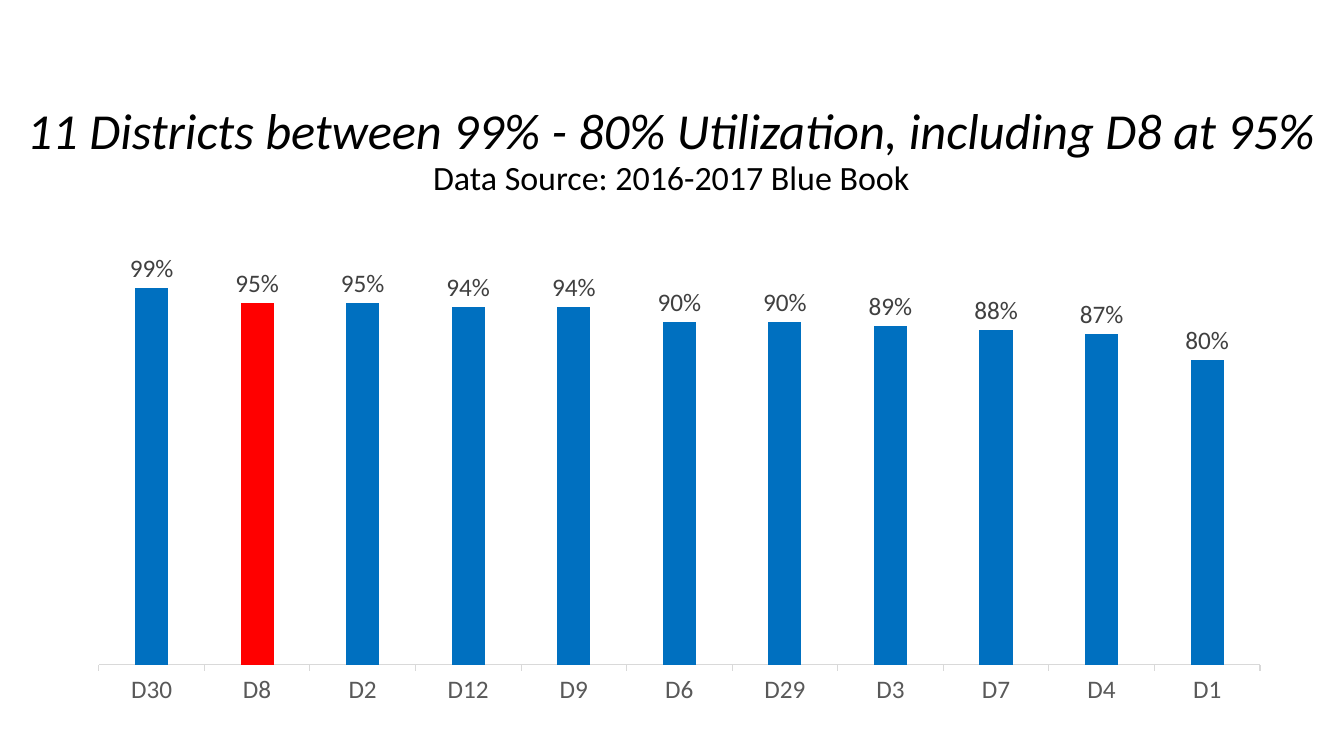
from pptx import Presentation
from pptx.chart.data import CategoryChartData
from pptx.dml.color import RGBColor
from pptx.enum.chart import XL_CHART_TYPE, XL_LABEL_POSITION, XL_TICK_MARK
from pptx.enum.text import MSO_ANCHOR, MSO_AUTO_SIZE, PP_ALIGN
from pptx.util import Pt

COLUMNS = XL_CHART_TYPE.COLUMN_CLUSTERED
OUTSIDE_END = XL_LABEL_POSITION.OUTSIDE_END
TICK_OUT, TICK_NONE = XL_TICK_MARK.OUTSIDE, XL_TICK_MARK.NONE
BOTTOM = MSO_ANCHOR.BOTTOM
NO_AUTOFIT = MSO_AUTO_SIZE.NONE
CENTER = PP_ALIGN.CENTER

FONT = "Calibri"
COLORS = {
    "heading": "000000",
    "district": "0070C0",
    "highlight": "FF0000",
    "value": "404040",
    "category": "595959",
    "axis": "D9D9D9",
}
HEADING = [
    ("11 Districts between 99% - 80% Utilization, including D8 at 95%", 36, True),
    ("Data Source: 2016-2017 Blue Book", 24.3, False),
]
UTILIZATION = {
    "D30": 0.99, "D8": 0.95, "D2": 0.95, "D12": 0.94, "D9": 0.94, "D6": 0.9,
    "D29": 0.9, "D3": 0.89, "D7": 0.88, "D4": 0.87, "D1": 0.8,
}
HIGHLIGHTED = "D8"


def color(name):
    return RGBColor.from_string(COLORS[name])


def style_font(font, size, color_name):
    font.name = FONT
    font.size = Pt(size)
    font.color.rgb = color(color_name)


def paint(part, color_name):
    part.format.fill.solid()
    part.format.fill.fore_color.rgb = color(color_name)


def add_heading(slide, left, top, width, height):
    heading = slide.shapes.title
    heading.left, heading.top = Pt(left), Pt(top)
    heading.width, heading.height = Pt(width), Pt(height)
    frame = heading.text_frame
    frame.word_wrap = True
    frame.auto_size = NO_AUTOFIT
    frame.vertical_anchor = BOTTOM
    frame.margin_left = frame.margin_right = Pt(7.2)
    frame.margin_top = frame.margin_bottom = 0
    for index, (wording, size, italic) in enumerate(HEADING):
        line = frame.add_paragraph() if index else frame.paragraphs[0]
        line.alignment = CENTER
        line.line_spacing = 0.9
        line.space_before = line.space_after = Pt(0)
        run = line.add_run()
        run.text = wording
        run.font.italic = italic
        style_font(run.font, size, "heading")


def add_utilization_chart(slide, left, top, width, height):
    data = CategoryChartData(number_format="0%")
    data.categories = list(UTILIZATION)
    data.add_series("Series 1", list(UTILIZATION.values()))
    chart = slide.shapes.add_chart(
        COLUMNS, Pt(left), Pt(top), Pt(width), Pt(height), data
    ).chart
    chart.has_title = False
    chart.has_legend = False
    style_font(chart.font, 10, "heading")

    # Columns, with one district picked out
    plot = chart.plots[0]
    plot.gap_width = 219
    plot.overlap = -27
    plot.vary_by_categories = False
    districts = plot.series[0]
    districts.invert_if_negative = False
    paint(districts, "district")
    paint(districts.points[list(UTILIZATION).index(HIGHLIGHTED)], "highlight")

    # Value labels
    labels = districts.data_labels
    labels.show_value = True
    labels.position = OUTSIDE_END
    labels.number_format = "0%"
    labels.number_format_is_linked = False
    style_font(labels.font, 18, "value")

    # Axes
    district_axis = chart.category_axis
    district_axis.major_tick_mark = TICK_OUT
    district_axis.minor_tick_mark = TICK_NONE
    district_axis.format.line.color.rgb = color("axis")
    district_axis.format.line.width = Pt(0.75)
    style_font(district_axis.tick_labels.font, 18, "category")
    percent_axis = chart.value_axis
    percent_axis.minimum_scale = 0
    percent_axis.maximum_scale = 1.2
    percent_axis.has_major_gridlines = False
    percent_axis.tick_labels.number_format = "0%"
    percent_axis.tick_labels.number_format_is_linked = False
    percent_axis.visible = False


def main():
    deck = Presentation()
    deck.slide_width, deck.slide_height = Pt(960), Pt(540)
    slide = deck.slides.add_slide(deck.slide_layouts[5])
    add_heading(slide, 7.2, 36.7, 944.6, 104.4)
    add_utilization_chart(slide, 53.3, 141.1, 864, 370)
    deck.save("out.pptx")


if __name__ == "__main__":
    main()
